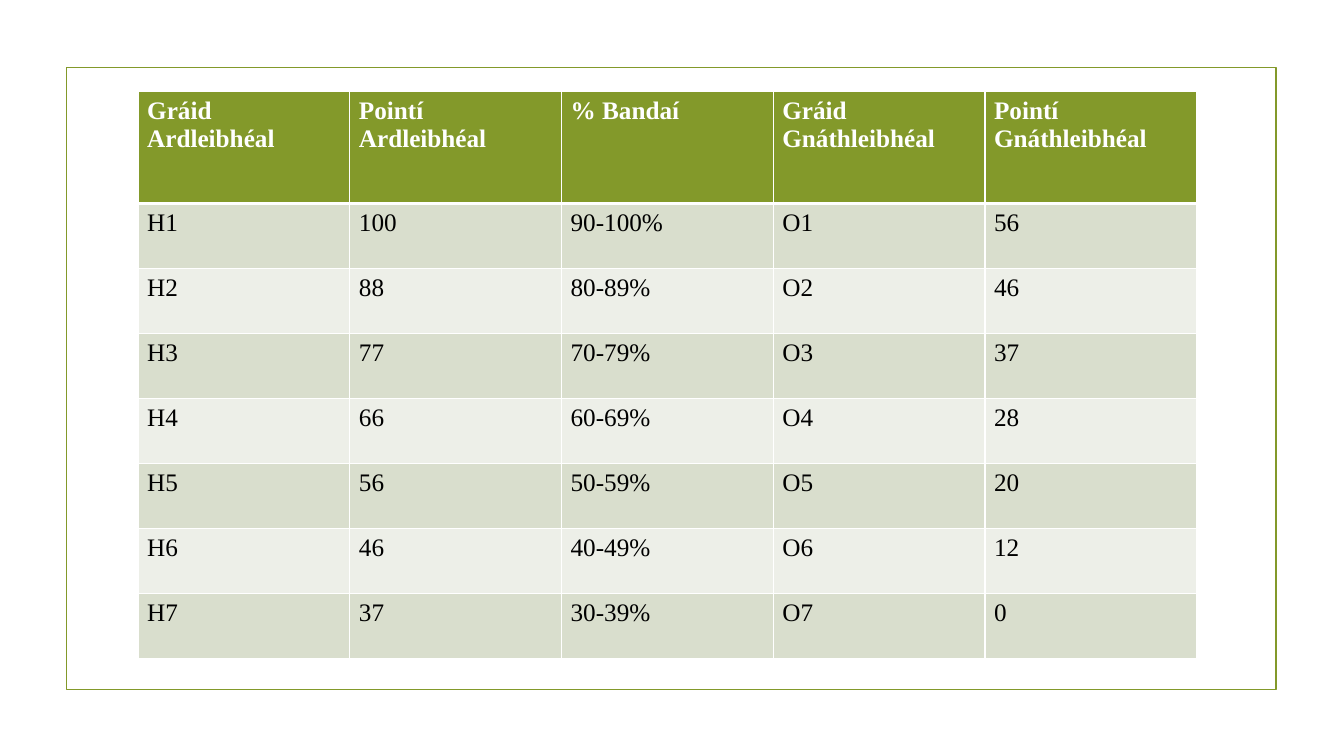
from dataclasses import dataclass

from lxml import etree
from pptx import Presentation
from pptx import util as u
from pptx.dml.color import RGBColor
from pptx.enum import shapes
from pptx.oxml import ns


@dataclass(frozen=True)
class Theme:
    font: str = "Times New Roman"
    size: int = 18
    green: str = "83992A"
    white: str = "FFFFFF"
    black: str = "000000"
    bands: tuple = ("D9DECD", "EDEFE8")
    frame_width: float = 1.25
    grid_width: int = 1
    header_rule_width: int = 3


class SlideBuilder:
    def __init__(self, slide, theme):
        self.slide = slide
        self.theme = theme

    def frame(self, left, top, width, height):
        shape = self.slide.shapes.add_shape(
            shapes.MSO_SHAPE.RECTANGLE, *map(u.Inches, (left, top, width, height)))
        shape.shadow.inherit = False
        shape.fill.background()
        shape.line.color.rgb = RGBColor.from_string(self.theme.green)
        shape.line.width = u.Pt(self.theme.frame_width)

    def borders(self, cell, widths):
        properties = cell._tc.get_or_add_tcPr()
        for side, width in widths.items():
            line = etree.SubElement(properties, ns.qn(f"a:ln{side}"), w=str(u.Pt(width)))
            fill = etree.SubElement(line, ns.qn("a:solidFill"))
            etree.SubElement(fill, ns.qn("a:srgbClr"), val=self.theme.white)

    def cell(self, cell, content, fill, color, bold, widths):
        self.borders(cell, widths)
        cell.fill.solid()
        cell.fill.fore_color.rgb = RGBColor.from_string(fill)
        cell.margin_left = cell.margin_right = u.Inches(0.09)
        cell.margin_top = cell.margin_bottom = u.Inches(0.05)
        frame = cell.text_frame
        for index, words in enumerate(content.split("\n")):
            paragraph = frame.add_paragraph() if index else frame.paragraphs[0]
            run = paragraph.add_run()
            run.text = words
            run.font.name = self.theme.font
            run.font.size = u.Pt(self.theme.size)
            run.font.bold = bold
            run.font.color.rgb = RGBColor.from_string(color)

    def table(self, left, top, column_width, header_height, row_height, rows):
        theme = self.theme
        heights = [header_height] + [row_height] * (len(rows) - 1)
        table = self.slide.shapes.add_table(
            len(rows), len(rows[0]), u.Inches(left), u.Inches(top),
            u.Inches(column_width * len(rows[0])), u.Inches(sum(heights))).table
        for column in table.columns:
            column.width = u.Inches(column_width)
        for index, (values, height) in enumerate(zip(rows, heights)):
            table.rows[index].height = u.Inches(height)
            header = index == 0
            fill = theme.green if header else theme.bands[(index - 1) % 2]
            color = theme.white if header else theme.black
            widths = dict.fromkeys("LRTB", theme.grid_width)
            if header:
                widths["B"] = theme.header_rule_width
            elif index == 1:
                widths["T"] = theme.header_rule_width
            for column, value in enumerate(values):
                self.cell(table.cell(index, column), value, fill, color, header, widths)


GRADES = [
    ("Gráid\nArdleibhéal", "Pointí\nArdleibhéal", "% Bandaí",
     "Gráid\nGnáthleibhéal", "Pointí\nGnáthleibhéal"),
    ("H1", "100", "90-100%", "O1", "56"),
    ("H2", "88", "80-89%", "O2", "46"),
    ("H3", "77", "70-79%", "O3", "37"),
    ("H4", "66", "60-69%", "O4", "28"),
    ("H5", "56", "50-59%", "O5", "20"),
    ("H6", "46", "40-49%", "O6", "12"),
    ("H7", "37", "30-39%", "O7", "0"),
]


def main():
    presentation = Presentation()
    presentation.slide_width = u.Inches(13.33)
    presentation.slide_height = u.Inches(7.5)
    slide = presentation.slides.add_slide(presentation.slide_layouts[6])
    builder = SlideBuilder(slide, Theme())
    builder.frame(0.66, 0.67, 12, 6.17)
    builder.table(1.37, 0.91, 2.1, 1.11, 0.645, GRADES)
    presentation.save("out.pptx")


if __name__ == "__main__":
    main()
